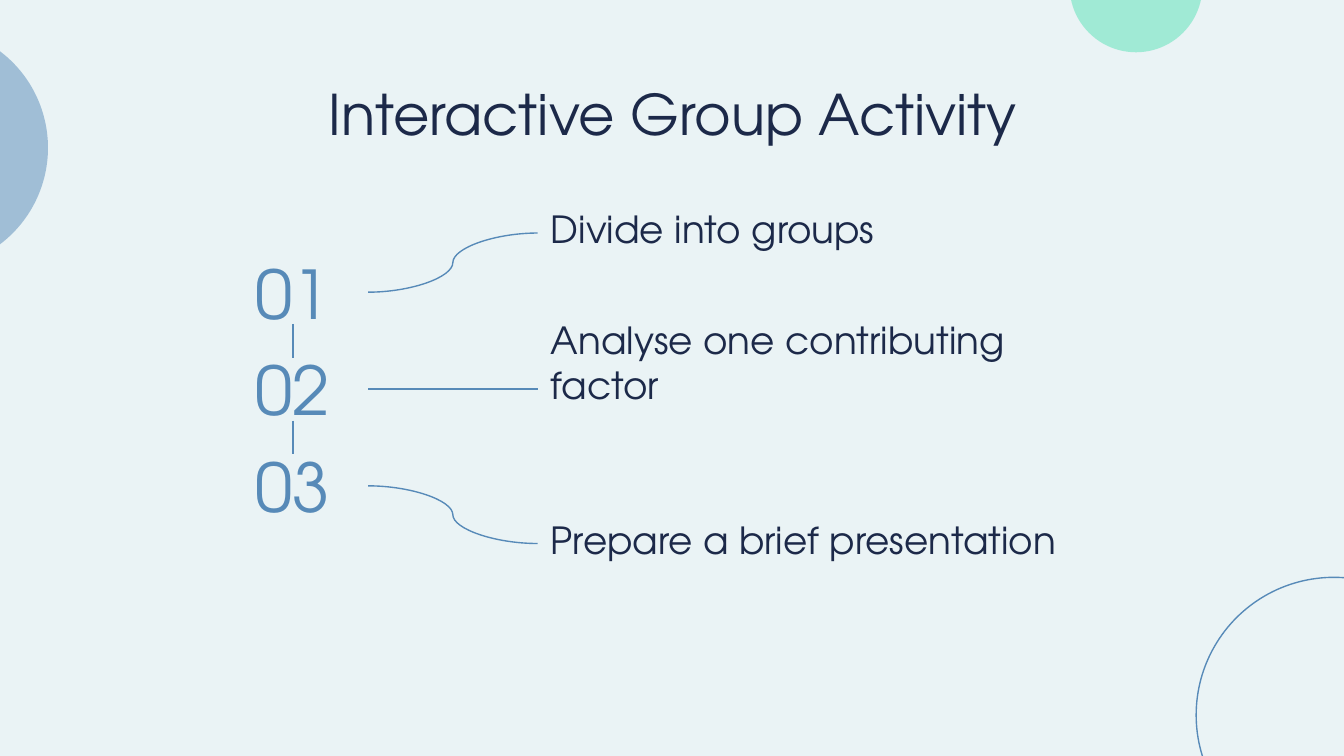
from lxml import etree
from pptx import Presentation
from pptx import util as u
from pptx.dml.color import RGBColor
from pptx.enum import shapes, text
from pptx.oxml import ns

BLUE, NAVY, MINT, PALE = "578AB8", "1C2949", "82E7C8", "EAF3F5"


def colour(hex_code):
    return RGBColor.from_string(hex_code)


class Page:
    font = "TeX Gyre Adventor"
    line_width = 0.75
    inset = 7.2

    def __init__(self, deck, background):
        self.slide = deck.slides.add_slide(deck.slide_layouts[6])
        fill = self.slide.background.fill
        fill.solid()
        fill.fore_color.rgb = colour(background)

    def circle(self, left, top, size, fill=None, opacity=100):
        """Draw a filled circle, or an outlined one when no fill is given."""
        shape = self.slide.shapes.add_shape(
            shapes.MSO_SHAPE.OVAL, u.Pt(left), u.Pt(top), u.Pt(size), u.Pt(size))
        shape.shadow.inherit = False
        if fill is None:
            shape.fill.background()
            self.style_line(shape.line)
            return
        shape.line.fill.background()
        shape.fill.solid()
        shape.fill.fore_color.rgb = colour(fill)
        tint = shape.fill._xPr.find(".//" + ns.qn("a:srgbClr"))
        etree.SubElement(tint, ns.qn("a:alpha"), val=str(opacity * 1000))

    def style_line(self, line):
        line.color.rgb = colour(BLUE)
        line.width = u.Pt(self.line_width)

    def words(self, content, left, top, width, height, size, ink,
              anchor=text.MSO_ANCHOR.TOP, align=text.PP_ALIGN.LEFT, side=inset):
        box = self.slide.shapes.add_textbox(
            u.Pt(left), u.Pt(top), u.Pt(width), u.Pt(height))
        frame = box.text_frame
        frame.word_wrap = True
        frame.vertical_anchor = anchor
        frame.margin_left = frame.margin_right = u.Pt(side)
        frame.margin_top = frame.margin_bottom = u.Pt(self.inset)
        frame.text = content
        para = frame.paragraphs[0]
        para.alignment = align
        font = para.runs[0].font
        font.name, font.size = self.font, u.Pt(size)
        font.color.rgb = colour(ink)

    def connector(self, kind, start, end):
        line = self.slide.shapes.add_connector(
            kind, *(u.Pt(value) for value in (*start, *end)))
        self.style_line(line.line)
        etree.SubElement(line._element.spPr, ns.qn("a:effectLst"))


def main():
    deck = Presentation()
    deck.slide_width, deck.slide_height = u.Pt(720), u.Pt(405)
    page = Page(deck, PALE)

    page.circle(640.8, 309.3, 147.6)
    page.circle(-103.9, 14.4, 129.6, BLUE, 50)
    page.circle(573, -43.2, 71.2, MINT, 70)
    page.words("Interactive Group Activity", 57, 35.3, 607, 45.4, 30, NAVY,
               align=text.PP_ALIGN.CENTER)

    number_left, number_width, number_top, pitch = 116.6, 80.6, 139.7, 51.85
    label_left, label_width, row_height = 288, 315.4, 33.8
    middle = number_left + number_width / 2
    steps = [
        ("Divide into groups", 108),
        ("Analyse one contributing factor", number_top + pitch),
        ("Prepare a brief presentation", 274.3),
    ]
    for index, (label, label_top) in enumerate(steps):
        top = number_top + index * pitch
        page.words(label, label_left, label_top, label_width, row_height, 20, NAVY,
                   anchor=text.MSO_ANCHOR.BOTTOM)
        page.words(f"{index + 1:02}", number_left, top, number_width, row_height,
                   36, BLUE, anchor=text.MSO_ANCHOR.MIDDLE,
                   align=text.PP_ALIGN.CENTER, side=0)
        page.connector(shapes.MSO_CONNECTOR.CURVE,
                       (number_left + number_width, top + row_height / 2),
                       (label_left, label_top + row_height / 2))
        if index:
            page.connector(shapes.MSO_CONNECTOR.STRAIGHT,
                           (middle, top - pitch + row_height), (middle, top))

    deck.save("out.pptx")


if __name__ == "__main__":
    main()
